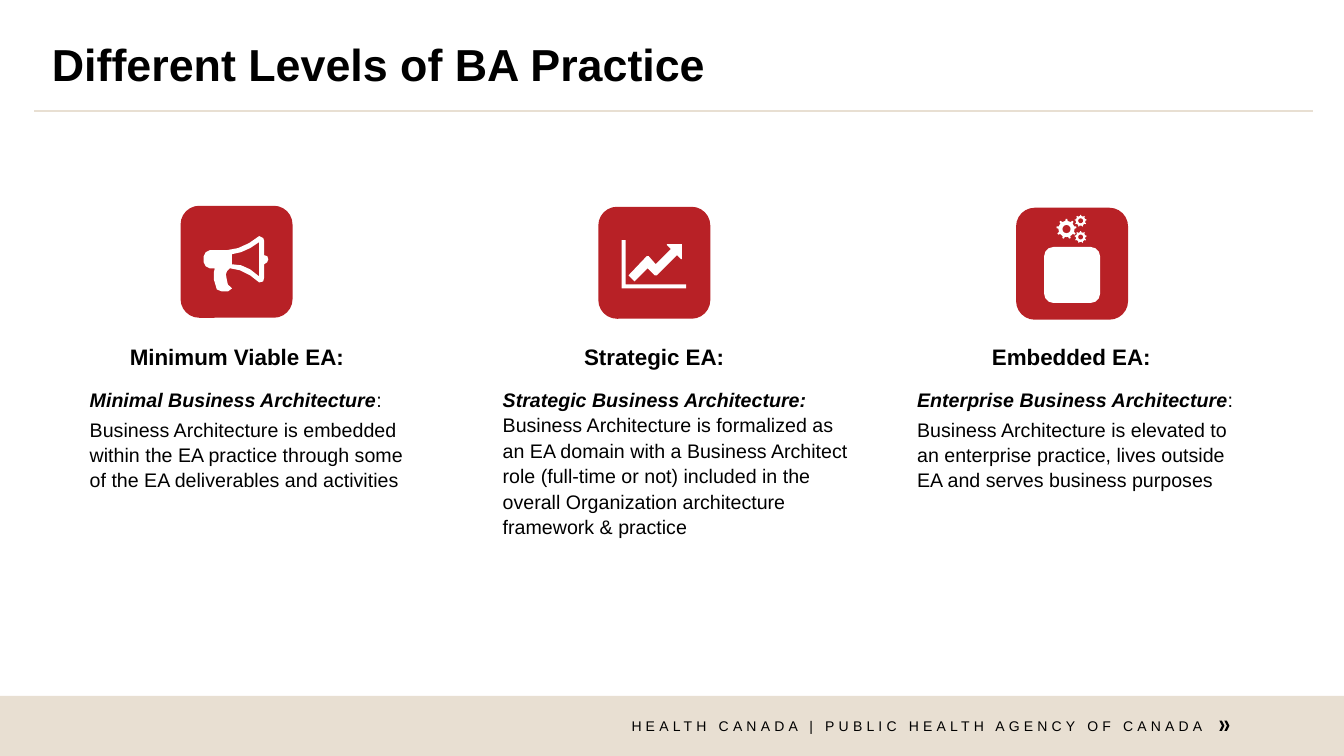
from pptx import Presentation
from pptx.dml.color import RGBColor
from pptx.enum import shapes, text
from pptx.util import Pt

BLACK, WHITE, RED, BEIGE = "000000", "FFFFFF", "B82126", "E8DFD2"
FONT = "Arial"
TILE = 80

MEGAPHONE = [
    [(83, 35), (82, 32), (78, 30), (68, 37), (57, 42), (46, 44), (29, 44),
     (25, 46), (23, 50), (23, 56), (25, 60), (29, 62), (34, 62), (33, 66),
     (33, 73), (36, 83), (41, 85), (47, 85), (51, 82), (47, 78), (46, 74),
     (45, 68), (46, 65), (49, 62), (59, 64), (69, 69), (78, 76), (82, 75),
     (83, 71), (83, 58), (86, 56), (87, 53), (86, 50), (83, 49)],
    [(51, 58), (51, 48), (60, 46), (69, 42), (78, 36), (78, 70), (69, 63),
     (60, 59)],
]
GROWTH = [
    [(83, 37), (68, 37), (68, 38), (72, 42), (57, 57), (50, 49), (48, 49),
     (30, 68), (36, 74), (49, 61), (56, 68), (58, 68), (78, 48), (82, 52),
     (83, 52)],
    [(27, 77), (27, 33), (23, 33), (23, 81), (87, 81), (87, 77)],
]
GEARS = [(28.8, 8, 14.4), (41.8, 5, 8.6), (41.8, 16.6, 8.6)]

LEVELS = [
    ("Minimum Viable EA:", 57, 245, [
        [("Minimal Business Architecture", True), (":", False)],
        [("Business Architecture is embedded within the EA practice through "
          "some of the EA deliverables and activities", False)]]),
    ("Strategic EA:", 352, 263.5, [
        [("Strategic Business Architecture: ", True),
         ("Business Architecture is formalized as an EA domain with a "
          "Business Architect role (full-time or not) included in the overall "
          "Organization architecture framework & practice", False)]]),
    ("Embedded EA:", 648, 240, [
        [("Enterprise Business Architecture", True), (":", False)],
        [("Business Architecture is elevated to an enterprise practice, lives "
          "outside EA and serves business purposes", False)]]),
]


def color(value):
    """Return the colour for a hex string."""
    return RGBColor.from_string(value)


def paint(shape, fill):
    """Give a shape a flat fill without outline or shadow."""
    shape.shadow.inherit = False
    shape.fill.solid()
    shape.fill.fore_color.rgb = color(fill)
    shape.line.fill.background()


def add_block(slide, kind, left, top, width, height, fill):
    """Add a filled preset shape."""
    shape = slide.shapes.add_shape(kind, Pt(left), Pt(top), Pt(width), Pt(height))
    paint(shape, fill)
    return shape


def add_glyph(slide, contours, left, top):
    """Add a white outline drawn in hundredths of an inch from a tile corner."""
    builder = None
    for contour in contours:
        if builder is None:
            builder = slide.shapes.build_freeform(*contour[0], scale=Pt(0.72))
        else:
            builder.move_to(*contour[0])
        builder.add_line_segments(contour[1:], close=True)
    paint(builder.convert_to_shape(Pt(left), Pt(top)), WHITE)


def add_text(slide, paragraphs, left, top, width, height, size=14, bold=False,
             align=text.PP_ALIGN.LEFT, anchor=text.MSO_ANCHOR.TOP,
             line_spacing=1.08, space_after=0, tracking=0, insets=None):
    """Add a text box whose paragraphs are lists of (words, emphasis) pairs."""
    box = slide.shapes.add_textbox(Pt(left), Pt(top), Pt(width), Pt(height))
    frame = box.text_frame
    frame.word_wrap = True
    frame.vertical_anchor = anchor
    if insets:
        (frame.margin_left, frame.margin_top, frame.margin_right,
         frame.margin_bottom) = [Pt(inset) for inset in insets]
    for index, runs in enumerate(paragraphs):
        paragraph = frame.add_paragraph() if index else frame.paragraphs[0]
        paragraph.alignment = align
        paragraph.line_spacing = line_spacing
        paragraph.space_after = Pt(space_after)
        for words, emphasis in runs:
            run = paragraph.add_run()
            run.text = words
            font = run.font
            font.name, font.size = FONT, Pt(size)
            font.bold, font.italic = bold or emphasis, emphasis
            font.color.rgb = color(BLACK)
            if tracking:
                run._r.get_or_add_rPr().set("spc", str(tracking * 100))


def add_rule(slide, left, right, top):
    """Add the thin horizontal line under the title."""
    rule = slide.shapes.add_connector(
        shapes.MSO_CONNECTOR.STRAIGHT, Pt(left), Pt(top), Pt(right), Pt(top))
    rule.line.color.rgb = color(BEIGE)
    rule.line.width = Pt(1.5)
    properties = rule._element.spPr
    properties.append(properties.makeelement(
        "{http://schemas.openxmlformats.org/drawingml/2006/main}effectLst", {}))


def add_team_icon(slide, left, top):
    """Add gears above a plain rounded panel."""
    preset = shapes.MSO_SHAPE
    for x, y, size in GEARS:
        add_block(slide, preset.GEAR_9, left + x, top + y, size, size, WHITE)
        hole = size * 0.4
        offset = (size - hole) / 2
        add_block(slide, preset.OVAL, left + x + offset, top + y + offset,
                  hole, hole, RED)
    add_block(slide, preset.ROUNDED_RECTANGLE, left + 20, top + 28, 40, 40, WHITE)


def add_footer(slide):
    """Add the footer band with its caption and double chevron."""
    add_block(slide, shapes.MSO_SHAPE.RECTANGLE, 0, 497, 960, 43, BEIGE)
    for left in (871, 874.6):
        add_block(slide, shapes.MSO_SHAPE.CHEVRON, left, 514.8, 3.6, 7.2, BLACK)
    add_text(slide, [[("HEALTH CANADA | PUBLIC HEALTH AGENCY OF CANADA", False)]],
             422, 512.6, 437, 16, size=10, align=text.PP_ALIGN.RIGHT,
             line_spacing=1.0, tracking=3, insets=(0, 0, 0, 3.6))


def main():
    """Build and save the slide."""
    presentation = Presentation()
    presentation.slide_width, presentation.slide_height = Pt(960), Pt(540)
    slide = presentation.slides.add_slide(presentation.slide_layouts[6])
    add_footer(slide)
    add_rule(slide, 24.5, 938, 79.2)
    add_text(slide, [[("Different Levels of BA Practice", False)]],
             30, 21.6, 900, 52.6, size=32, bold=True,
             anchor=text.MSO_ANCHOR.MIDDLE, line_spacing=0.9)
    for index, (heading, left, width, paragraphs) in enumerate(LEVELS):
        tile_left, tile_top = 129 + 298.4 * index, 147 + 0.7 * index
        add_block(slide, shapes.MSO_SHAPE.ROUNDED_RECTANGLE,
                  tile_left, tile_top, TILE, TILE, RED)
        if index < 2:
            add_glyph(slide, (MEGAPHONE, GROWTH)[index], tile_left, tile_top)
        else:
            add_team_icon(slide, tile_left, tile_top)
        add_text(slide, [[(heading, False)]], 59.8 + 298 * index, 239.8, 219, 28,
                 size=16, bold=True, align=text.PP_ALIGN.CENTER)
        add_text(slide, paragraphs, left, 272.2, width, 84, space_after=3)
    presentation.save("out.pptx")


if __name__ == "__main__":
    main()
